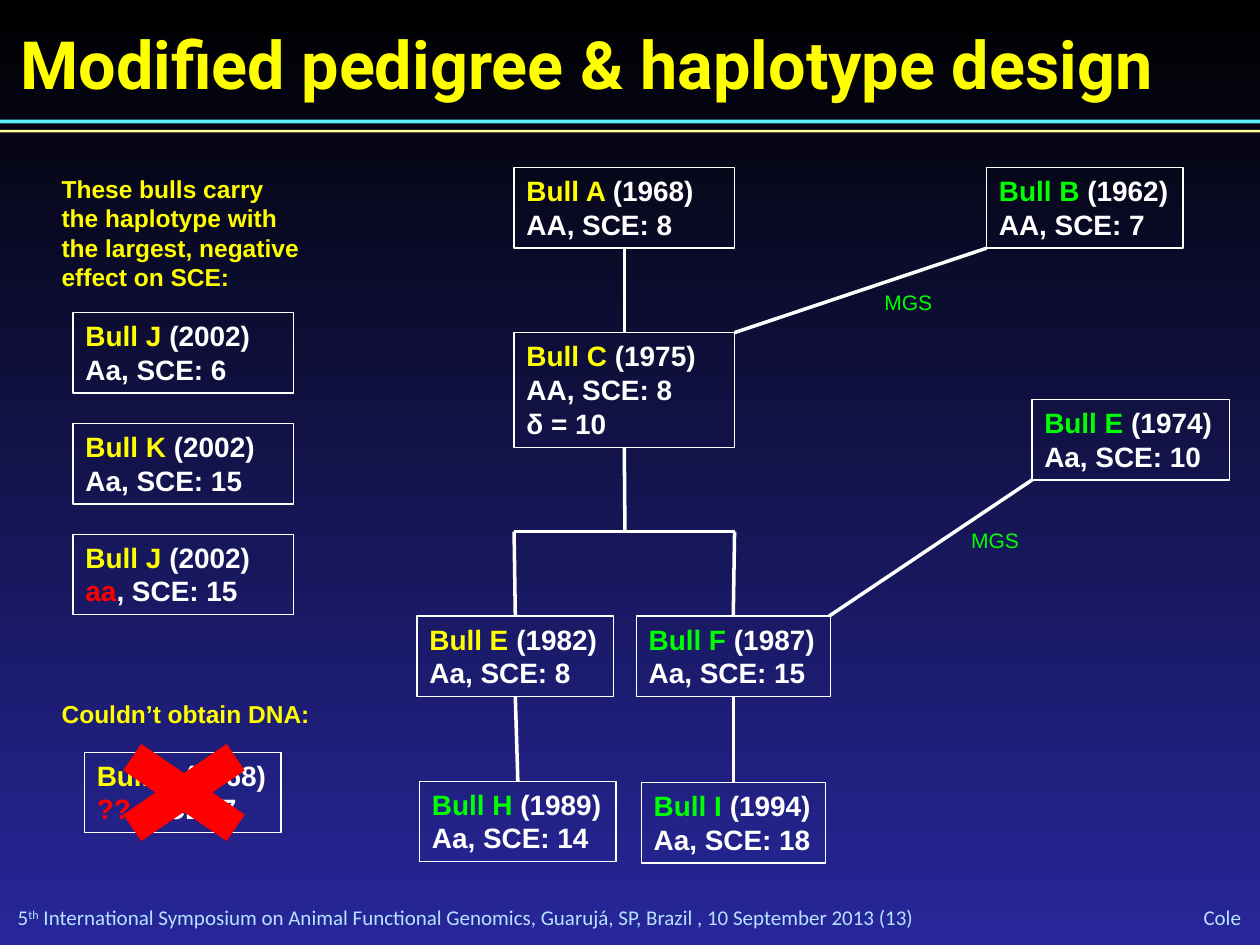
from pptx import Presentation
from pptx.dml.color import RGBColor
from pptx.enum.shapes import MSO_CONNECTOR, MSO_SHAPE
from pptx.enum.text import MSO_ANCHOR, PP_ALIGN
from pptx.oxml.ns import qn
from pptx.util import Inches, Pt
from lxml.etree import SubElement

HEX = {"black": "000000", "navy": "27279B", "cyan": "5BEFFF", "cream": "FFFF99",
       "pale": "B8E2FF", "yellow": "FFFF00", "green": "00FF00", "red": "FF0000",
       "white": "FFFFFF"}
RGB = {name: RGBColor.from_string(code) for name, code in HEX.items()}
COLS, ROWS = 100, 75

deck = Presentation()
deck.slide_width, deck.slide_height = Inches(10), Inches(7.5)
CELL = deck.slide_width / COLS
slide = deck.slides.add_slide(deck.slide_layouts[6])
shapes = slide.shapes


def place(*cells):
    return [round(cell * CELL) for cell in cells]


def write(shape, lines, size, font="Arial", bold=True, wrap=False):
    frame = shape.text_frame
    frame.word_wrap = wrap
    frame.vertical_anchor = MSO_ANCHOR.TOP
    for i, line in enumerate(lines):
        para = frame.add_paragraph() if i else frame.paragraphs[0]
        para.alignment = PP_ALIGN.LEFT
        for text, tint in line:
            run = para.add_run()
            run.text = text
            run.font.name, run.font.size, run.font.bold = font, Pt(size), bold
            run.font.color.rgb = RGB[tint]
    return frame


fill = slide.background.fill
fill.gradient()
fill.gradient_angle = 270
for stop, tint in zip(fill.gradient_stops, ("black", "navy")):
    stop.color.rgb = RGB[tint]

for row, high, tint in ((9.5, 0.3, "cyan"), (10.3, 0.2, "cream")):
    band = shapes.add_shape(MSO_SHAPE.RECTANGLE, *place(0, row, COLS, high))
    band.shadow.inherit = False
    band.fill.solid()
    band.fill.fore_color.rgb = RGB[tint]
    band.line.fill.background()

event = [("5", "pale"), ("th", "pale"),
         (" International Symposium on Animal Functional Genomics, Guarujá, SP, Brazil , "
          "10 September 2013 (13)", "pale")]
edges = [
    ((1.6, 1.6, 96.8, 6.8), [("Modified pedigree & haplotype design", "yellow")], 38, "Roboto", True),
    ((1.4, 71.8, 88.1, 2), event, 12, "Calibri", False),
    ((87.2, 71.7, 11.3, 2.1), [("Cole", "pale")], 12, "Calibri", False),
]
for spot, line, size, font, bold in edges:
    frame = write(shapes.add_textbox(*place(*spot)), [line], size, font, bold, True)
    frame.margin_left = frame.margin_right = frame.margin_top = frame.margin_bottom = 0
    frame.vertical_anchor = MSO_ANCHOR.MIDDLE
    para = frame.paragraphs[0]
    if line is event:
        para.runs[1]._r.get_or_add_rPr().set("baseline", "30000")
    if spot[0] > COLS / 2:
        para.alignment = PP_ALIGN.RIGHT

LOW = 6.4
WIDE = 17.5
bulls = [
    ("A", 40.8, 13.3, WIDE, "A", "yellow", 1968, "AA", 8),
    ("B", 78.3, 13.3, 15.6, "B", "green", 1962, "AA", 7),
    ("C", 40.8, 26.4, WIDE, "C", "yellow", 1975, "AA", 8),
    ("son", 33.1, 48.9, 15.6, "E", "yellow", 1982, "Aa", 8),
    ("F", 50.5, 48.9, 15.4, "F", "green", 1987, "Aa", 15),
    ("E", 81.9, 31.7, 15.7, "E", "green", 1974, "Aa", 10),
    ("H", 33.3, 62, 15.6, "H", "green", 1989, "Aa", 14),
    ("I", 50.9, 62.1, 14.6, "I", "green", 1994, "Aa", 18),
    ("D", 6.7, 59.7, 15.6, "D", "yellow", 1968, "??", 7),
]
side = [("J", "Aa", 6), ("K", "Aa", 15), ("J", "aa", 15)]
for i, (name, gene, score) in enumerate(side):
    bulls.append((f"side{i}", 5.8, 24.8 + 8.8 * i, WIDE, name, "yellow", 2002, gene, score))

boxes = {}
for key, col, row, wide, name, tint, year, gene, score in bulls:
    high = 9.1 if key == "C" else LOW
    box = shapes.add_shape(MSO_SHAPE.RECTANGLE, *place(col, row, wide, high))
    box.shadow.inherit = False
    box.fill.background()
    box.line.color.rgb = RGB["white"]
    box.line.width = Pt(0.75)
    mark = "red" if gene in ("aa", "??") else "white"
    lines = [[(f"Bull {name} ", tint), (f"({year})", "white")],
             [(gene, mark), (f", SCE: {score}", "white")]]
    if key == "C":
        lines.append([("δ = 10", "white")])
    write(box, lines, 16, wrap=wide == WIDE)
    boxes[key] = box

LEFT, MID, RIGHT, BAR = 40.8, 49.6, 58.3, 42.2
links = [
    (MID, 19.7, MID, 26.4, "A", "C"),
    (MID, 35.5, MID, BAR, "C", None),
    (RIGHT, BAR, LEFT, BAR, None, None),
    (LEFT, BAR, LEFT, 48.9, None, "son"),
    (RIGHT, BAR, RIGHT, 48.9, None, "F"),
    (LEFT, 55.3, LEFT, 62, "son", "H"),
    (RIGHT, 55.3, RIGHT, 62.1, "F", "I"),
    (78.3, 19.7, RIGHT, 26.4, None, None),
    (81.9, 38.1, 65.8, 48.9, None, None),
]
for *ends, top, foot in links:
    link = shapes.add_connector(MSO_CONNECTOR.STRAIGHT, *place(*ends))
    if top:
        link.begin_connect(boxes[top], 2)
    if foot:
        link.end_connect(boxes[foot], 0)
    link.line.color.rgb = RGB["white"]
    link.line.width = Pt(2)
    SubElement(link._element.spPr, qn("a:effectLst"))

for col, row in ((69.2, 22.5), (76.1, 41.4)):
    write(shapes.add_textbox(*place(col, row, 5.9, 3)), [[("MGS", "green")]], 12, bold=False)

claim = ("These bulls carry", "the haplotype with", "the largest, negative", "effect on SCE:")
notes = [((3.9, 13.3, 21.1, 10.4), claim),
         ((3.9, 55, 21.9, 3.4), ("Couldn’t obtain DNA:",))]
for spot, words in notes:
    write(shapes.add_textbox(*place(*spot)), [[(word, "yellow")] for word in words], 14)

cross = shapes.add_shape(MSO_SHAPE.MATH_MULTIPLY, *place(6.7, 57.5, 15.8, 10.8))
cross.shadow.inherit = False
cross.fill.solid()
cross.fill.fore_color.rgb = RGB["red"]
cross.line.fill.background()

deck.save("out.pptx")
